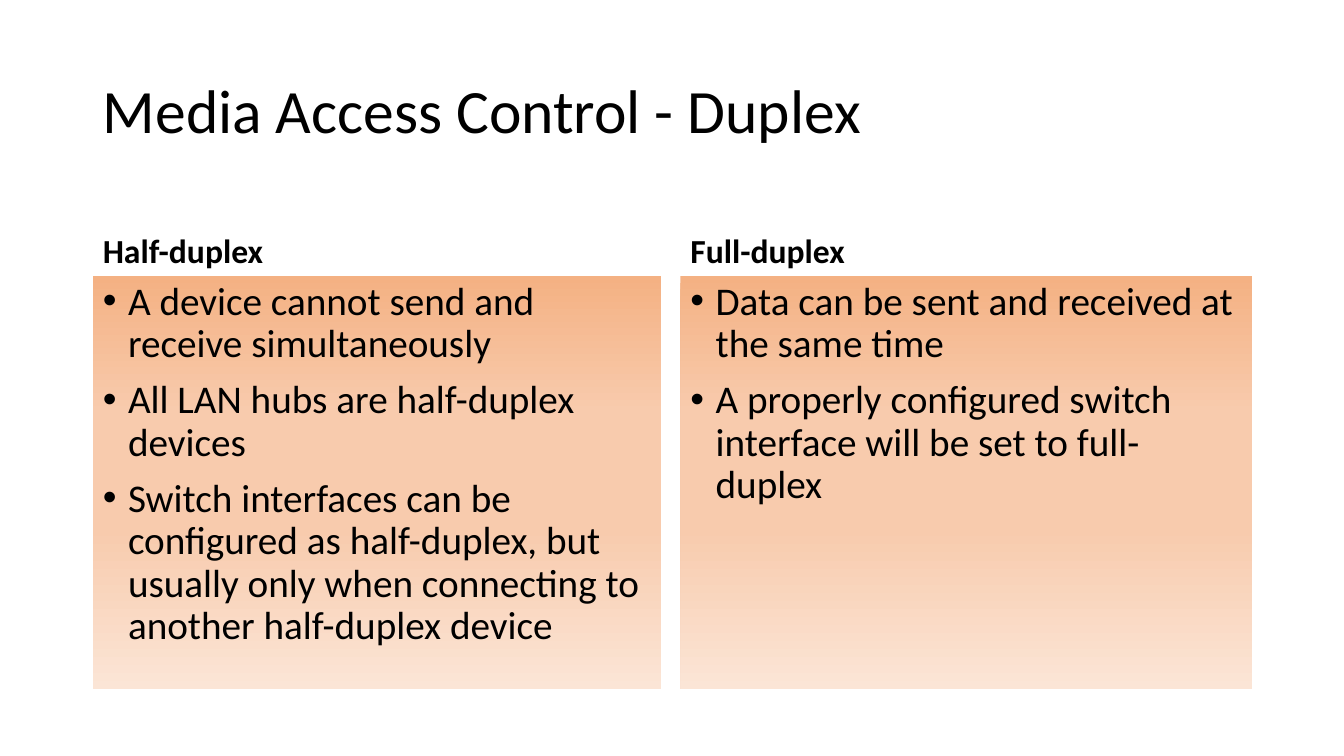
from copy import deepcopy

from lxml.etree import SubElement
from pptx import Presentation
from pptx.dml.color import RGBColor
from pptx.enum.text import MSO_ANCHOR as Anchor, MSO_AUTO_SIZE as AutoSize, PP_ALIGN as Align
from pptx.oxml.ns import qn
from pptx.util import Pt

TITLE = "Media Access Control - Duplex"
COLUMNS = [
    ("Half-duplex", [
        "A device cannot send and receive simultaneously",
        "All LAN hubs are half-duplex devices",
        "Switch interfaces can be configured as half-duplex, but usually only "
        "when connecting to another half-duplex device",
    ]),
    ("Full-duplex", [
        "Data can be sent and received at the same time",
        "A properly configured switch interface will be set to full-duplex",
    ]),
]

BLACK = RGBColor(0x00, 0x00, 0x00)
ORANGE = RGBColor(0xF4, 0xB1, 0x83)
PEACH = RGBColor(0xF8, 0xCB, 0xAD)
CREAM = RGBColor(0xFB, 0xE5, 0xD6)
GRADIENT = [(0, ORANGE), (0.33, PEACH), (0.61, PEACH), (1, CREAM)]

FONT = "Calibri"
COMPARISON_LAYOUT = 4
LEFT, RIGHT = 66.24, 894.24
TITLE_TOP, TITLE_HEIGHT = 28.8, 104.4
COLUMN_SPANS = [(LEFT, 472.32), (486, RIGHT)]
HEADING_TOP, LIST_TOP, LIST_BOTTOM = 132.48, 197.28, 492.48
BULLET_INDENT = 18


def place(shape, left, top, right, bottom):
    shape.left, shape.top = Pt(left), Pt(top)
    shape.width, shape.height = Pt(right - left), Pt(bottom - top)


def write(shape, lines, size, bold=False, anchor=Anchor.TOP, space_before=10, bulleted=False):
    frame = shape.text_frame
    frame.text = "\n".join(lines)
    frame.word_wrap = True
    frame.auto_size = AutoSize.NONE
    frame.vertical_anchor = anchor
    for paragraph in frame.paragraphs:
        paragraph.alignment = Align.LEFT
        paragraph.line_spacing = 0.9
        paragraph.space_before = Pt(space_before)
        font = paragraph.runs[0].font
        font.name, font.size, font.bold = FONT, Pt(size), bold
        font.color.rgb = BLACK
        if bulleted:
            add_bullet(paragraph)


def add_bullet(paragraph):
    properties = paragraph._p.get_or_add_pPr()
    properties.set("marL", str(Pt(BULLET_INDENT)))
    properties.set("indent", str(-Pt(BULLET_INDENT)))
    SubElement(properties, qn("a:buFont"), typeface="Arial")
    SubElement(properties, qn("a:buChar"), char="•")


def fill_gradient(shape):
    """Fill the shape from top to bottom with the GRADIENT stops."""
    fill = shape.fill
    fill.gradient()
    fill.gradient_angle = 270
    stop_list = shape._element.spPr.find(".//" + qn("a:gsLst"))
    while len(stop_list) < len(GRADIENT):
        stop_list.append(deepcopy(stop_list[0]))
    for stop, (position, color) in zip(fill.gradient_stops, GRADIENT):
        stop.position = position
        stop.color.rgb = color


def main():
    presentation = Presentation()
    presentation.slide_width, presentation.slide_height = Pt(960), Pt(540)
    slide = presentation.slides.add_slide(presentation.slide_layouts[COMPARISON_LAYOUT])

    title, *bodies = slide.placeholders
    place(title, LEFT, TITLE_TOP, RIGHT, TITLE_TOP + TITLE_HEIGHT)
    write(title, [TITLE], 44, anchor=Anchor.MIDDLE, space_before=0)

    for (heading_text, points), (left, right), heading, body in zip(
            COLUMNS, COLUMN_SPANS, bodies[::2], bodies[1::2]):
        place(heading, left, HEADING_TOP, right, LIST_TOP)
        write(heading, [heading_text], 24, bold=True, anchor=Anchor.BOTTOM)
        place(body, left, LIST_TOP, right, LIST_BOTTOM)
        write(body, points, 28, bulleted=True)
        fill_gradient(body)

    presentation.save("out.pptx")


if __name__ == "__main__":
    main()
